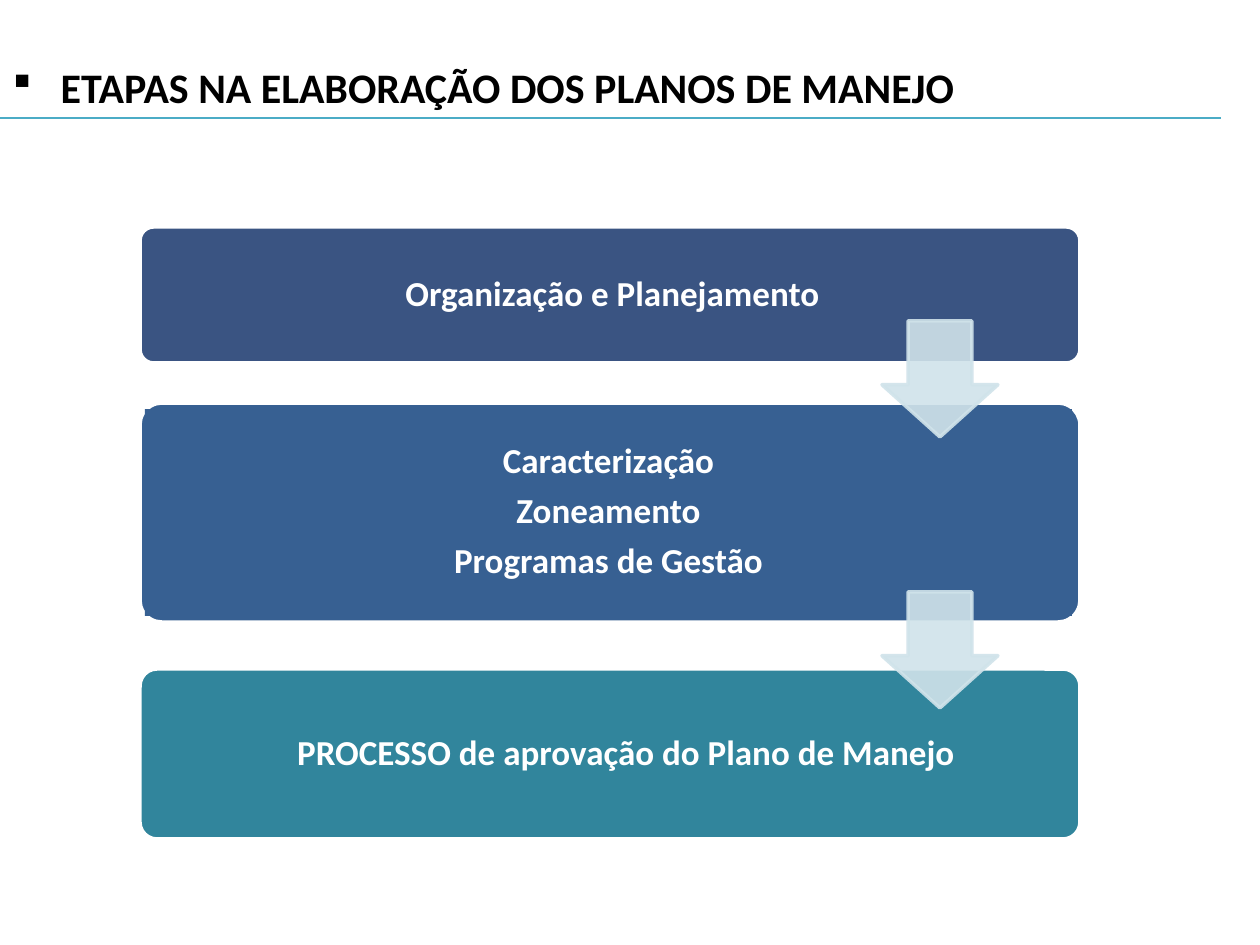
"""Build a slide with the three stages of drawing up a management plan."""
import pptx
import pptx.dml.color
import pptx.enum.shapes
import pptx.enum.text
import pptx.oxml.ns
import pptx.util
from lxml import etree

COLORS = {
    "title": "000000", "rule": "4BACC6", "white": "FFFFFF", "arrow": "D0E3EA",
    "planning": "254275", "zoning": "376092", "approval": "31859C",
}
SHAPES = pptx.enum.shapes.MSO_SHAPE
ALIGN = pptx.enum.text.PP_ALIGN
ANCHOR = pptx.enum.text.MSO_ANCHOR
qn = pptx.oxml.ns.qn


def px(*lengths):
    return [pptx.util.Emu(round(length * 914400 / 126)) for length in lengths]


def paint(color_format, name, opacity=100):
    color_format.rgb = pptx.dml.color.RGBColor.from_string(COLORS[name])
    if opacity < 100:
        color = color_format._xFill.find(qn("a:srgbClr"))
        etree.SubElement(color, qn("a:alpha")).set("val", str(opacity * 1000))


deck = pptx.Presentation()
deck.slide_width, deck.slide_height = px(1260, 945)
page = deck.slides.add_slide(deck.slide_layouts[5])

title = page.shapes.title
title.left, title.top, title.width, title.height = px(0, 55, 1260, 63)
title.text_frame.vertical_anchor = ANCHOR.TOP
para = title.text_frame.paragraphs[0]
para.alignment = ALIGN.LEFT
properties = para._p.get_or_add_pPr()
indent = px(48)[0]
properties.set("marL", str(indent))
properties.set("indent", str(-indent))
etree.SubElement(properties, qn("a:buFont")).set("typeface", "Wingdings")
etree.SubElement(properties, qn("a:buChar")).set("char", "§")
span = para.add_run()
span.text = "ETAPAS NA ELABORAÇÃO DOS PLANOS DE MANEJO"
span.font.name = "Calibri"
span.font.size = pptx.util.Pt(24)
span.font.bold = True
paint(span.font.fill._xPr.get_or_change_to_solidFill() and span.font.color, "title")

rule = page.shapes.add_connector(
    pptx.enum.shapes.MSO_CONNECTOR.STRAIGHT, *px(0, 118, 1221, 118))
paint(rule.line.color, "rule")
rule.line.width = pptx.util.Pt(0.75)
etree.SubElement(rule._element.spPr, qn("a:effectLst"))

stages = [
    ("planning", 90, 227, 136, 4, 935, ["Organização e Planejamento"]),
    ("zoning", 100, 403, 219, 6, 927,
     ["Caracterização", "Zoneamento", "Programas de Gestão"]),
    ("approval", 100, 669, 170, 5, 962,
     ["PROCESSO de aprovação do Plano de Manejo"]),
]
for color, opacity, top, height, inset, text_width, lines in stages:
    card = page.shapes.add_shape(SHAPES.ROUNDED_RECTANGLE, *px(140, top, 940, height))
    card.adjustments[0] = 0.1
    card.shadow.inherit = False
    card.fill.solid()
    paint(card.fill.fore_color, color, opacity)
    paint(card.line.color, "white")
    card.line.width = pptx.util.Pt(2)

    box = page.shapes.add_textbox(*px(145, top + inset, text_width, height - 2 * inset))
    if len(lines) > 1:
        box.fill.solid()
        paint(box.fill.fore_color, color)
    frame = box.text_frame
    frame.word_wrap = True
    frame.vertical_anchor = ANCHOR.MIDDLE
    frame.margin_left, frame.margin_top, frame.margin_right, frame.margin_bottom = px(9, 9, 9, 9)
    for number, line in enumerate(lines):
        para = frame.add_paragraph() if number else frame.paragraphs[0]
        para.alignment = ALIGN.CENTER
        para.line_spacing = 0.9
        para.space_after = pptx.util.Pt(7)
        span = para.add_run()
        span.text = line
        span.font.name = "Calibri"
        span.font.size = pptx.util.Pt(20)
        span.font.bold = True
        paint(span.font.color, "white")

for top in (321, 592):
    arrow = page.shapes.add_shape(SHAPES.DOWN_ARROW, *px(882, top, 116, 116))
    arrow.adjustments[0] = 0.55
    arrow.adjustments[1] = 0.45
    arrow.shadow.inherit = False
    arrow.fill.solid()
    paint(arrow.fill.fore_color, "arrow", 90)
    paint(arrow.line.color, "arrow", 90)
    arrow.line.width = pptx.util.Pt(2)

deck.save("out.pptx")
